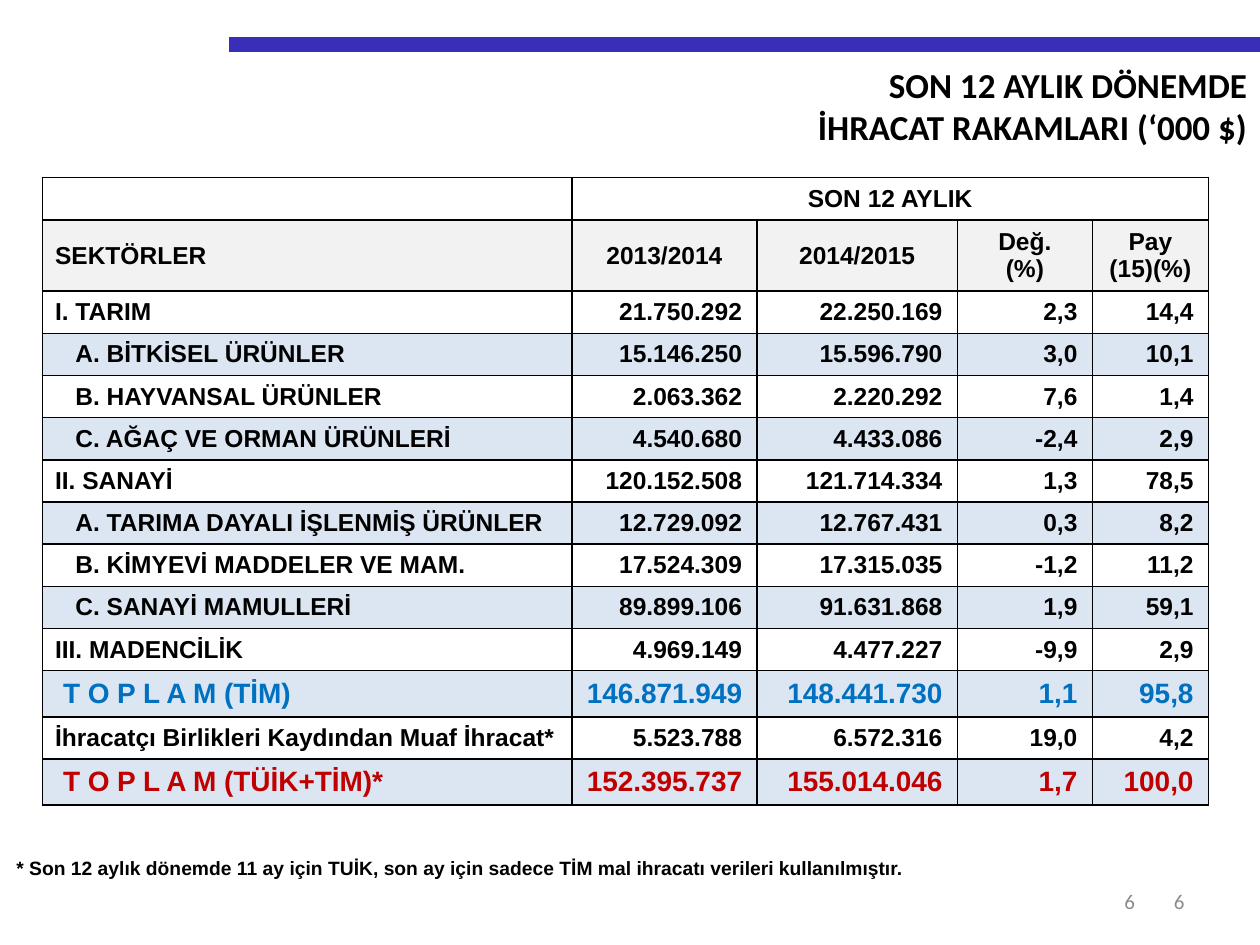
"""Build the slide with export figures for the last 12 months."""
import dataclasses

import pptx
import pptx.dml.color
import pptx.enum.shapes
import pptx.enum.text
import pptx.oxml
import pptx.oxml.ns
import pptx.util

Cm, Pt = pptx.util.Cm, pptx.util.Pt
RGB = pptx.dml.color.RGBColor.from_string
ALIGN = pptx.enum.text.PP_ALIGN
ANCHOR = pptx.enum.text.MSO_ANCHOR


@dataclasses.dataclass(frozen=True)
class Theme:
    heading_font: str = "Calibri"
    body_font: str = "Arial"
    black: str = "000000"
    bar: str = "382EB8"
    grey: str = "8C8C8C"
    header: str = "F2F2F2"
    band: str = "DCE6F2"
    blue: str = "0070C0"
    red: str = "C00000"
    title: int = 20
    total: int = 16
    body: int = 14
    number: int = 12
    note: int = 11


T = Theme()


def write(tf, text, size, color=T.black, font=T.body_font, bold=True, align=ALIGN.LEFT):
    for i, line in enumerate(text.split("\n")):
        p = tf.paragraphs[0] if i == 0 else tf.add_paragraph()
        p.alignment = align
        r = p.add_run()
        r.text = line
        r.font.size = Pt(size)
        r.font.name = font
        r.font.bold = bold
        r.font.color.rgb = RGB(color)


def style_cell(cell, left, right, fill=None, border=True):
    cell.margin_left, cell.margin_right = Cm(left), Cm(right)
    cell.margin_top = cell.margin_bottom = 0
    cell.vertical_anchor = ANCHOR.MIDDLE
    for side in ("L", "R", "T", "B") if border else ():
        cell._tc.get_or_add_tcPr().append(pptx.oxml.parse_xml(
            f'<a:ln{side} {pptx.oxml.ns.nsdecls("a")} w="12700"><a:solidFill>'
            f'<a:srgbClr val="{T.black}"/></a:solidFill></a:ln{side}>'))
    if fill:
        cell.fill.solid()
        cell.fill.fore_color.rgb = RGB(fill)
    else:
        cell.fill.background()


prs = pptx.Presentation()
prs.slide_width, prs.slide_height = Cm(25.4), Cm(19.05)
s = prs.slides.add_slide(prs.slide_layouts[5])

bar = s.shapes.add_connector(
    pptx.enum.shapes.MSO_CONNECTOR.STRAIGHT, Cm(4.62), Cm(0.9), Cm(25.4), Cm(0.9))
bar.line.color.rgb = RGB(T.bar)
bar.line.width = Pt(8.5)
bar._element.spPr.append(
    pptx.oxml.parse_xml(f'<a:effectLst {pptx.oxml.ns.nsdecls("a")}/>'))

title = s.shapes.title
title.left, title.top, title.width, title.height = Cm(2.7), Cm(1.15), Cm(22.7), Cm(1.96)
tf = title.text_frame
tf.auto_size = pptx.enum.text.MSO_AUTO_SIZE.NONE
tf.vertical_anchor = ANCHOR.TOP
write(tf, "SON 12 AYLIK DÖNEMDE\nİHRACAT RAKAMLARI (‘000 $)", T.title,
      font=T.heading_font, align=ALIGN.RIGHT)

for left, width in ((17.8, 5.33), (18.2, 5.93)):
    sp = s.shapes.add_textbox(Cm(left), Cm(17.65), Cm(width), Cm(1.02))
    tf = sp.text_frame
    tf.word_wrap = True
    tf.vertical_anchor = ANCHOR.MIDDLE
    write(tf, "6", T.number, T.grey, T.heading_font, False, ALIGN.RIGHT)

headers = ["SEKTÖRLER", "2013/2014", "2014/2015", "Değ.\n(%)", "Pay\n(15)(%)"]
sectors = [
    (0, "I. TARIM", "21.750.292", "22.250.169", "2,3", "14,4"),
    (0.41, "A. BİTKİSEL ÜRÜNLER", "15.146.250", "15.596.790", "3,0", "10,1"),
    (0.41, "B. HAYVANSAL ÜRÜNLER", "2.063.362", "2.220.292", "7,6", "1,4"),
    (0.41, "C. AĞAÇ VE ORMAN ÜRÜNLERİ", "4.540.680", "4.433.086", "-2,4", "2,9"),
    (0, "II. SANAYİ", "120.152.508", "121.714.334", "1,3", "78,5"),
    (0.41, "A. TARIMA DAYALI İŞLENMİŞ ÜRÜNLER", "12.729.092", "12.767.431", "0,3", "8,2"),
    (0.41, "B. KİMYEVİ MADDELER VE MAM.", "17.524.309", "17.315.035", "-1,2", "11,2"),
    (0.41, "C. SANAYİ MAMULLERİ", "89.899.106", "91.631.868", "1,9", "59,1"),
    (0, "III. MADENCİLİK", "4.969.149", "4.477.227", "-9,9", "2,9"),
    (0.16, "T O P L A M (TİM)", "146.871.949", "148.441.730", "1,1", "95,8"),
    (0, "İhracatçı Birlikleri Kaydından Muaf İhracat*", "5.523.788", "6.572.316", "19,0", "4,2"),
    (0.16, "T O P L A M (TÜİK+TİM)*", "152.395.737", "155.014.046", "1,7", "100,0"),
]
totals = {9: T.blue, 11: T.red}

table = s.shapes.add_table(
    len(sectors) + 2, len(headers), Cm(0.86), Cm(3.58), Cm(23.5), Cm(12.62)).table
table.first_row = table.horz_banding = False
for col, width in zip(table.columns, (10.67, 3.73, 4.04, 2.72, 2.34)):
    col.width = Cm(width)
for i, row in enumerate(table.rows):
    row.height = Cm(1.44 if i == 1 else 0.93 if i - 2 in totals else 0.85)

for c, text in enumerate(headers):
    style_cell(table.cell(0, c), 0.25, 0.25)
    cell = table.cell(1, c)
    style_cell(cell, 0.25, 0.25, T.header)
    write(cell.text_frame, text, T.body, align=ALIGN.CENTER if c else ALIGN.LEFT)
table.cell(0, 1).merge(table.cell(0, 4))
write(table.cell(0, 1).text_frame, "SON 12 AYLIK", T.body, align=ALIGN.CENTER)

for i, (indent, *values) in enumerate(sectors):
    size = T.total if i in totals else T.body
    for c, text in enumerate(values):
        cell = table.cell(i + 2, c)
        style_cell(cell, 0.03 if c else 0.25 + indent, 0.3 if c else 0.25,
                   T.band if i % 2 else None)
        write(cell.text_frame, text, size, totals.get(i, T.black),
              align=ALIGN.RIGHT if c else ALIGN.LEFT)

note = s.shapes.add_table(2, 1, Cm(0.3), Cm(17.12), Cm(18.8), Cm(1.6)).table
note.first_row = note.horz_banding = False
for i in range(2):
    style_cell(note.cell(i, 0), 0.03, 0.03, border=False)
write(note.cell(0, 0).text_frame,
      "* Son 12 aylık dönemde 11 ay için TUİK, son ay için sadece TİM mal ihracatı "
      "verileri kullanılmıştır.", T.note)

prs.save("out.pptx")
